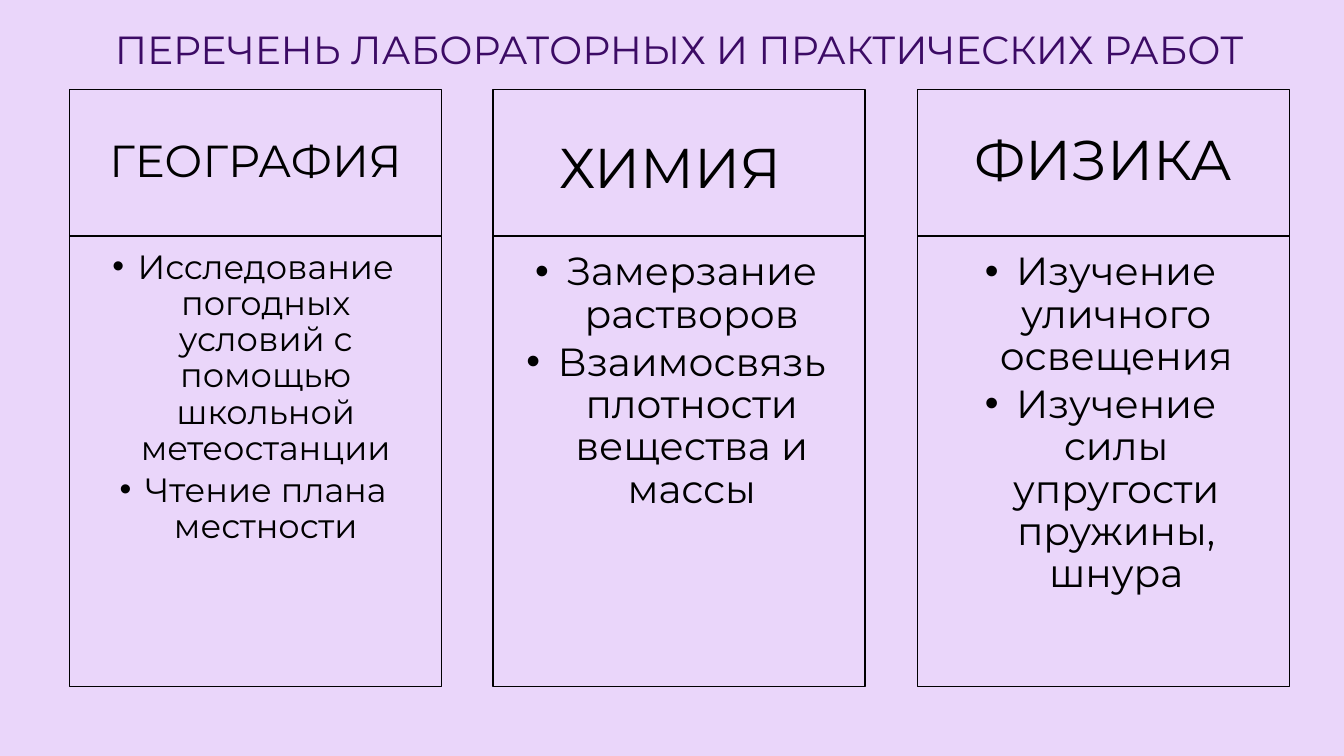
from pptx import Presentation
from pptx.dml.color import RGBColor
from pptx.enum.shapes import MSO_SHAPE
from pptx.enum.text import MSO_ANCHOR, MSO_AUTO_SIZE, PP_ALIGN
from pptx.oxml.ns import qn
from pptx.util import Emu, Pt
from lxml import etree

RECTANGLE = MSO_SHAPE.RECTANGLE
TOP, MIDDLE = MSO_ANCHOR.TOP, MSO_ANCHOR.MIDDLE
CENTER = PP_ALIGN.CENTER

LILAC = RGBColor(0xEA, 0xD6, 0xFA)
PURPLE = RGBColor(0x3C, 0x0B, 0x65)
BLACK = RGBColor(0, 0, 0)
WHITE = RGBColor(0xFF, 0xFF, 0xFF)
FONT = "Montserrat"

EMU_PER_PX = 9144  # 100 px to the inch
SLIDE_WIDTH, SLIDE_HEIGHT = 1333, 750
CARD_LEFT, CARD_TOP, CARD_WIDTH = 69, 89, 369
LAST_CARD_LEFT = 910
HEADER_HEIGHT, BODY_HEIGHT = 145, 447

# Text size: (left, top, right, bottom) insets
HEADER_INSETS = {32: (25, 14, 25, 14), 40: (31, 18, 31, 18)}
BODY_INSETS = {24: (14, 14, 19, 21), 28: (16, 16, 22, 24)}
BULLET_INDENT = {24: 25, 28: 31}

TITLE = "ПЕРЕЧЕНЬ ЛАБОРАТОРНЫХ И ПРАКТИЧЕСКИХ РАБОТ"
# Header runs (text, size, font, colour), body size, body items
SUBJECTS = [
    ([("ГЕОГРАФИЯ", 32, FONT, BLACK)], 24,
     ["Исследование погодных условий с помощью школьной метеостанции",
      "Чтение плана местности"]),
    ([("ХИМИЯ", 40, FONT, BLACK), (" ", 56, "Calibri", WHITE)], 28,
     ["Замерзание растворов",
      "Взаимосвязь плотности вещества и массы"]),
    ([("ФИЗИКА", 40, FONT, BLACK)], 28,
     ["Изучение уличного освещения",
      "Изучение силы упругости пружины, шнура"]),
]


def px(value):
    return Emu(value * EMU_PER_PX)


def add_run(paragraph, text, size, font_name, color):
    run = paragraph.add_run()
    run.text = text
    run.font.size = Pt(size)
    run.font.name = font_name
    run.font.color.rgb = color


def add_title(slide):
    title = slide.shapes.title
    title.left, title.top = px(-30), px(20)
    title.width, title.height = px(1407), px(57)
    frame = title.text_frame
    frame.word_wrap = True
    frame.auto_size = MSO_AUTO_SIZE.SHAPE_TO_FIT_TEXT
    frame.vertical_anchor = TOP
    paragraph = frame.paragraphs[0]
    paragraph.alignment = CENTER
    add_run(paragraph, TITLE, 28, FONT, PURPLE)


def add_box(slide, left, top, height, insets, anchor):
    """Add an outlined box and return its text frame."""
    shape = slide.shapes.add_shape(
        RECTANGLE, px(left), px(top), px(CARD_WIDTH), px(height))
    shape.shadow.inherit = False
    shape.fill.background()
    shape.line.color.rgb = BLACK
    shape.line.width = Pt(1)
    frame = shape.text_frame
    frame.word_wrap = True
    frame.vertical_anchor = anchor
    (frame.margin_left, frame.margin_top,
     frame.margin_right, frame.margin_bottom) = map(px, insets)
    return frame


def add_bullet(paragraph, indent):
    paragraph.level = 1
    properties = paragraph._p.get_or_add_pPr()
    properties.set("marL", str(px(indent)))
    properties.set("indent", str(px(-indent)))
    etree.SubElement(properties, qn("a:buFont"), typeface="Arial")
    etree.SubElement(properties, qn("a:buChar"), char="•")


def add_header(slide, left, runs):
    insets = HEADER_INSETS[runs[0][1]]
    frame = add_box(slide, left, CARD_TOP, HEADER_HEIGHT, insets, MIDDLE)
    paragraph = frame.paragraphs[0]
    paragraph.alignment = CENTER
    paragraph.line_spacing = 0.9
    for run in runs:
        add_run(paragraph, *run)


def add_body(slide, left, size, items):
    frame = add_box(slide, left, CARD_TOP + HEADER_HEIGHT, BODY_HEIGHT,
                    BODY_INSETS[size], TOP)
    for index, item in enumerate(items):
        paragraph = frame.add_paragraph() if index else frame.paragraphs[0]
        add_bullet(paragraph, BULLET_INDENT[size])
        paragraph.alignment = CENTER
        paragraph.line_spacing = 0.9
        paragraph.space_after = Pt(4)
        add_run(paragraph, item, size, FONT, BLACK)


def main():
    presentation = Presentation()
    presentation.slide_width = px(SLIDE_WIDTH)
    presentation.slide_height = px(SLIDE_HEIGHT)
    slide = presentation.slides.add_slide(presentation.slide_layouts[5])
    slide.background.fill.solid()
    slide.background.fill.fore_color.rgb = LILAC

    add_title(slide)

    # One card per subject, evenly spread
    span = LAST_CARD_LEFT - CARD_LEFT
    for index, (header_runs, size, items) in enumerate(SUBJECTS):
        left = CARD_LEFT + span * index // (len(SUBJECTS) - 1)
        add_header(slide, left, header_runs)
        add_body(slide, left, size, items)

    presentation.save("out.pptx")


if __name__ == "__main__":
    main()
